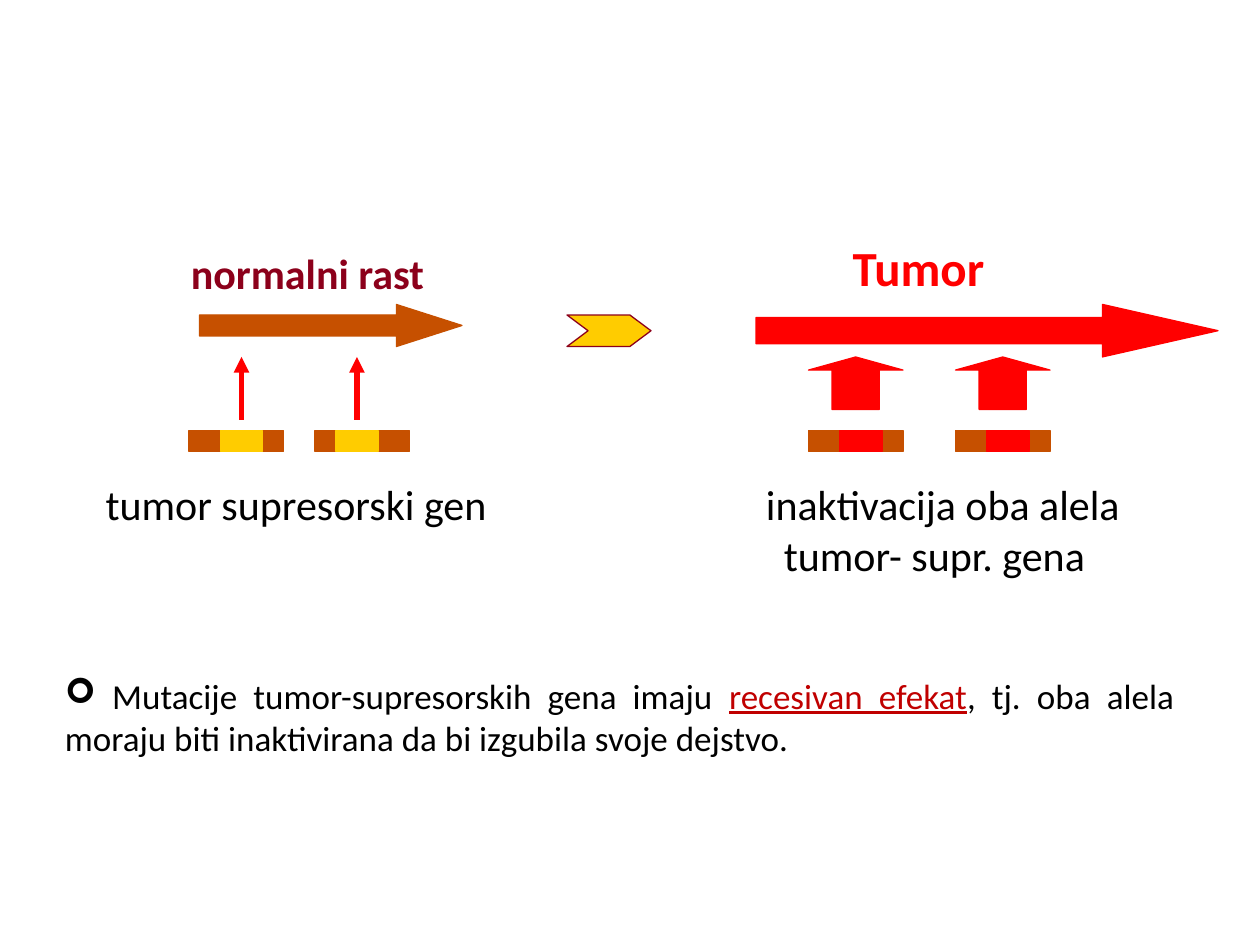
from dataclasses import dataclass
from typing import Optional

from lxml.etree import SubElement as Sub
from pptx import Presentation
from pptx.dml.color import RGBColor as Rgb
from pptx.enum.shapes import MSO_CONNECTOR as Conn, MSO_SHAPE as Geo
from pptx.enum.text import PP_ALIGN as Align
from pptx.oxml.ns import qn
from pptx.util import Pt

PX = 7620  # EMU per px, 120 px to the inch
HUES = {
    "brown": "C65000", "gold": "FFCC00", "red": "FF0000",
    "wine": "8C001B", "black": "000000", "dark": "C00000",
}


@dataclass
class Box:
    x: int
    y: int
    w: int
    h: int

    def emu(self) -> list[int]:
        return [n * PX for n in (self.x, self.y, self.w, self.h)]


@dataclass
class Gene:
    x: int
    band: int  # offset of the coloured band
    hue: str


@dataclass
class Run:
    text: str
    hue: str = "black"
    under: bool = False


@dataclass
class Label:
    box: Box
    runs: list[Run]
    size: int
    bold: bool = False
    align: Align = Align.CENTER
    indent: int = 0
    bullet: str = ""


GENES = [
    Gene(180, 30, "gold"), Gene(300, 20, "gold"),
    Gene(770, 30, "red"), Gene(910, 30, "red"),
]
LABELS = [
    Label(Box(77, 450, 410, 60), [Run("tumor supresorski gen")], 24),
    Label(Box(680, 220, 400, 68), [Run("Tumor ", "red")], 28, True),
    Label(Box(170, 230, 310, 60), [Run("normalni rast", "wine")], 24, True,
          Align.LEFT),
    Label(Box(650, 450, 480, 109),
          [Run("inaktivacija oba alela tumor- supr. gena")], 24, indent=16),
    Label(Box(50, 636, 1080, 92), [
        Run(" Mutacije tumor-supresorskih gena imaju "),
        Run("recesivan efekat", "dark", True),
        Run(", tj. oba alela moraju biti inaktivirana "
            "da bi izgubila svoje dejstvo."),
    ], 20, align=Align.JUSTIFY, bullet="➢"),
]


def rgb(hue: str) -> Rgb:
    return Rgb.from_string(HUES[hue])


def style(obj: object, form: dict) -> None:
    for key, val in form.items():
        setattr(obj, key, val)


def draw_shape(tree, geo: Geo, box: Box, hue: str,
               edge: Optional[str] = None, adj: tuple = ()) -> None:
    shape = tree.add_shape(geo, *box.emu())
    shape.shadow.inherit = False
    shape.fill.solid()
    shape.fill.fore_color.rgb = rgb(hue)
    shape.line.color.rgb = rgb(edge or hue)
    shape.line.width = Pt(0.75)
    for i, val in enumerate(adj):
        shape.adjustments[i] = val


def draw_gene(tree, gene: Gene) -> None:
    draw_shape(tree, Geo.RECTANGLE, Box(gene.x, 410, 90, 20), "brown")
    draw_shape(tree, Geo.RECTANGLE, Box(gene.x + gene.band, 410, 40, 20),
               gene.hue)


def draw_signal(tree, x: int) -> None:
    line = tree.add_connector(Conn.STRAIGHT, x * PX, 400 * PX,
                              x * PX, 340 * PX)
    line.line.color.rgb = rgb("red")
    line.line.width = Pt(3)
    Sub(line.line._get_or_add_ln(), qn("a:tailEnd"), type="triangle")
    Sub(line._element.spPr, qn("a:effectLst"))


def draw_label(tree, label: Label) -> None:
    frame = tree.add_textbox(*label.box.emu()).text_frame
    frame.word_wrap = True
    para = frame.paragraphs[0]
    para.alignment = label.align
    props = para._p.get_or_add_pPr()
    if label.indent:
        props.set("indent", str(label.indent * PX))
    if label.bullet:
        Sub(props, qn("a:buFont"), typeface="Wingdings")
        Sub(props, qn("a:buChar"), char=label.bullet)
    for part in label.runs:
        run = para.add_run()
        run.text = part.text
        style(run.font, {"name": "Calibri", "size": Pt(label.size),
                         "bold": label.bold, "underline": part.under})
        run.font.color.rgb = rgb(part.hue)


def main() -> None:
    deck = Presentation()
    style(deck, {"slide_width": 1200 * PX, "slide_height": 900 * PX})
    tree = deck.slides.add_slide(deck.slide_layouts[6]).shapes

    # Gene alleles, with thin or thick signals above them
    for gene in GENES:
        draw_gene(tree, gene)
        if gene.hue == "gold":
            draw_signal(tree, gene.x + gene.band + 20)
        else:
            draw_shape(tree, Geo.UP_ARROW, Box(gene.x, 340, 90, 50), "red",
                       adj=(0.5, 0.25))

    # Growth arrows and the step between them
    draw_shape(tree, Geo.RIGHT_ARROW, Box(190, 290, 250, 40), "brown",
               adj=(0.5, 1.56))
    draw_shape(tree, Geo.CHEVRON, Box(540, 300, 80, 30), "gold", "wine",
               (0.67,))
    draw_shape(tree, Geo.RIGHT_ARROW, Box(720, 290, 440, 50), "red",
               adj=(0.5, 2.2))

    # Captions and the closing note
    for label in LABELS:
        draw_label(tree, label)

    deck.save("out.pptx")


if __name__ == "__main__":
    main()
